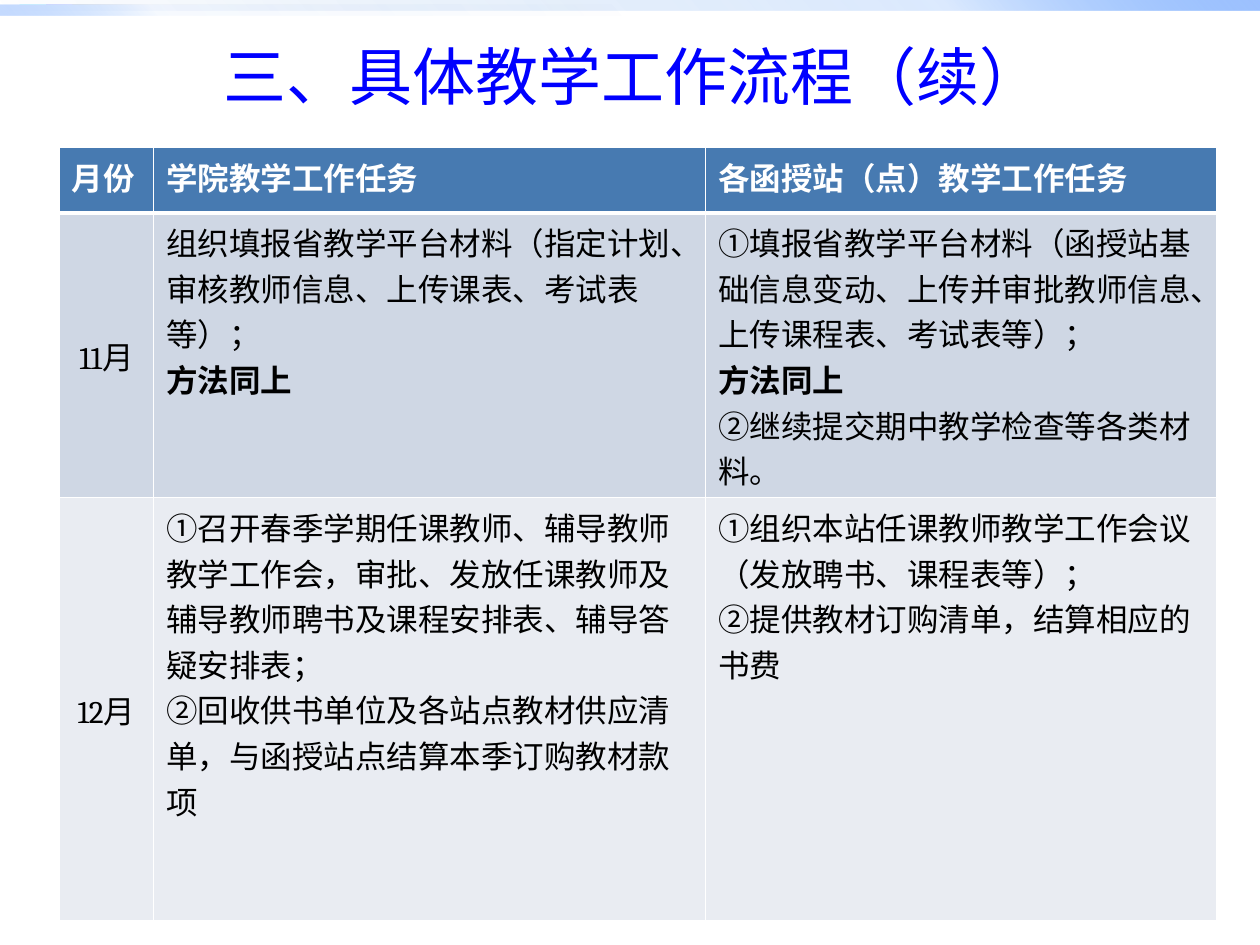
from lxml import etree
from pptx import Presentation
from pptx.dml.color import RGBColor
from pptx.enum.shapes import MSO_SHAPE
from pptx.enum.text import MSO_ANCHOR, PP_ALIGN
from pptx.oxml.ns import qn
from pptx.util import Inches, Pt

RECT = MSO_SHAPE.RECTANGLE
TOP, MIDDLE = MSO_ANCHOR.TOP, MSO_ANCHOR.MIDDLE
LEFT, CENTER = PP_ALIGN.LEFT, PP_ALIGN.CENTER

# The grid has 100 columns and 75 rows of equal size
COLUMNS, ROWS = 100, 75
COLORS = {
    "title": "0000FF", "white": "FFFFFF", "text": "000000",
    "header": "477AB1", "odd": "CFD7E4", "even": "E9ECF2",
    "deep": "0058B7", "mid": "4F95FF", "light": "9EC2FF",
}
SERIF, SANS = "Cambria", "Noto Sans CJK SC"
BODY = {"size": Pt(18), "name": SERIF, "bold": False}
PLAIN, BOLD, GOTHIC = {}, {"bold": True}, {"name": SANS}

HEADER = ["月份", "学院教学工作任务", "各函授站（点）教学工作任务"]
# Each month: label, then two cells of paragraphs made of (text, format) spans
MONTHS = [
    ("11月",
     [[("组织填报省教学平台材料（指定计划、审核教师信息、上传课表、考试表等）；", GOTHIC)],
      [("方法同上", {**GOTHIC, **BOLD})]],
     [[("①填报省教学平台材料（函授站基础信息变动、上传并审批教师信息、上传课程表、考试表等）；", PLAIN)],
      [("方法同上", BOLD)],
      [("②继续提交期中教学检查等各类材料。", PLAIN)]]),
    ("12月",
     [[("①召开春季学期任课教师、辅导教师教学工作会，审批、发放任课教师及辅导教师聘书及课程安排表、辅导答疑安排表；\n②", GOTHIC),
       ("回收供书单位及各站点教材供应清单，与函授站点结算本季订购教材款项", PLAIN)]],
     [[("①", GOTHIC), ("组织本站任课教师教学工作会议（发放聘书、课程表等）；", PLAIN)],
      [("②", GOTHIC), ("提供教材订购清单，结算相应的书费", PLAIN)]]),
]


class SlideBuilder:
    def __init__(self, deck):
        self.deck = deck
        self.slide = deck.slides.add_slide(deck.slide_layouts[6])

    def across(self, columns):
        return round(self.deck.slide_width * columns / COLUMNS)

    def down(self, rows):
        return round(self.deck.slide_height * rows / ROWS)

    def place(self, left, top, width, height):
        return self.across(left), self.down(top), self.across(width), self.down(height)

    def fill_text(self, frame, paragraphs, color, align=LEFT, base=BODY):
        for index, spans in enumerate(paragraphs):
            para = frame.paragraphs[0] if index == 0 else frame.add_paragraph()
            para.alignment = align
            for text, style in spans:
                for number, line in enumerate(text.split("\n")):
                    if number:
                        para.add_line_break()
                    span = para.add_run()
                    span.text = line
                    for key, value in {**base, **style}.items():
                        setattr(span.font, key, value)
                    span.font.color.rgb = RGBColor.from_string(COLORS[color])
                    latin = span.font._element.find(qn("a:latin"))
                    asian = etree.Element(qn("a:ea"), typeface=SANS)
                    latin.addnext(asian)

    def bar(self, at, stops, angle):
        shape = self.slide.shapes.add_shape(RECT, *self.place(*at))
        shape.shadow.inherit = False
        shape.line.fill.background()
        shape.fill.gradient()
        gradient = shape._element.spPr.find(qn("a:gradFill"))
        for child in list(gradient):
            gradient.remove(child)
        stop_list = etree.SubElement(gradient, qn("a:gsLst"))
        for position, color, opacity in stops:
            stop = etree.SubElement(stop_list, qn("a:gs"), pos=str(position * 1000))
            paint = etree.SubElement(stop, qn("a:srgbClr"), val=COLORS[color])
            etree.SubElement(paint, qn("a:alpha"), val=str(opacity * 1000))
        etree.SubElement(gradient, qn("a:lin"), ang=str(angle * 60000), scaled="0")

    def title(self, at, text):
        frame = self.slide.shapes.add_textbox(*self.place(*at)).text_frame
        frame.word_wrap = True
        frame.vertical_anchor = MIDDLE
        self.fill_text(frame, [[(text, PLAIN)]], "title", CENTER,
                       {"size": Pt(36), "name": SANS})

    def borders(self, cell, bottom):
        properties = cell._tc.get_or_add_tcPr()
        widths = {"lnL": 1, "lnR": 1, "lnT": 1, "lnB": bottom}
        for index, (side, width) in enumerate(widths.items()):
            line = etree.Element(qn(f"a:{side}"), w=str(Pt(width)))
            fill = etree.SubElement(line, qn("a:solidFill"))
            etree.SubElement(fill, qn("a:srgbClr"), val=COLORS["white"])
            properties.insert(index, line)

    def cell(self, cell, paragraphs, fill, color="text", anchor=TOP, align=LEFT, bottom=1):
        cell.fill.solid()
        cell.fill.fore_color.rgb = RGBColor.from_string(COLORS[fill])
        cell.vertical_anchor = anchor
        self.borders(cell, bottom)
        self.fill_text(cell.text_frame, paragraphs, color, align)

    def schedule(self, left, top, widths, heights):
        at = self.place(left, top, sum(widths), sum(heights))
        table = self.slide.shapes.add_table(len(heights), len(widths), *at).table
        for column, width in zip(table.columns, widths):
            column.width = self.across(width)
        for row, height in zip(table.rows, heights):
            row.height = self.down(height)
        for index, text in enumerate(HEADER):
            self.cell(table.cell(0, index), [[(text, BOLD)]], "header", "white", bottom=3)
        for row, (month, *tasks) in enumerate(MONTHS, 1):
            fill = "odd" if row % 2 else "even"
            self.cell(table.cell(row, 0), [[(month, PLAIN)]], fill,
                      anchor=MIDDLE, align=CENTER)
            for column, paragraphs in enumerate(tasks, 1):
                self.cell(table.cell(row, column), paragraphs, fill)


def main():
    deck = Presentation()
    deck.slide_width, deck.slide_height = Inches(10), Inches(7.5)
    builder = SlideBuilder(deck)

    # Fading bars along the top edge
    builder.bar((0, 0, 100, 0.8),
                [(0, "deep", 0), (75, "mid", 20), (100, "light", 100)], 315)
    builder.bar((0, 0.4, 50, 0.8),
                [(0, "deep", 0), (75, "mid", 5), (100, "light", 60)], 135)

    # Title and monthly task table
    builder.title((5.5, 1.6, 89.5, 8.7), "三、具体教学工作流程（续）")
    builder.schedule(4.7, 11.7, [7.5, 43.8, 40.6], [5.2, 22.6, 33.6])
    deck.save("out.pptx")


if __name__ == "__main__":
    main()
